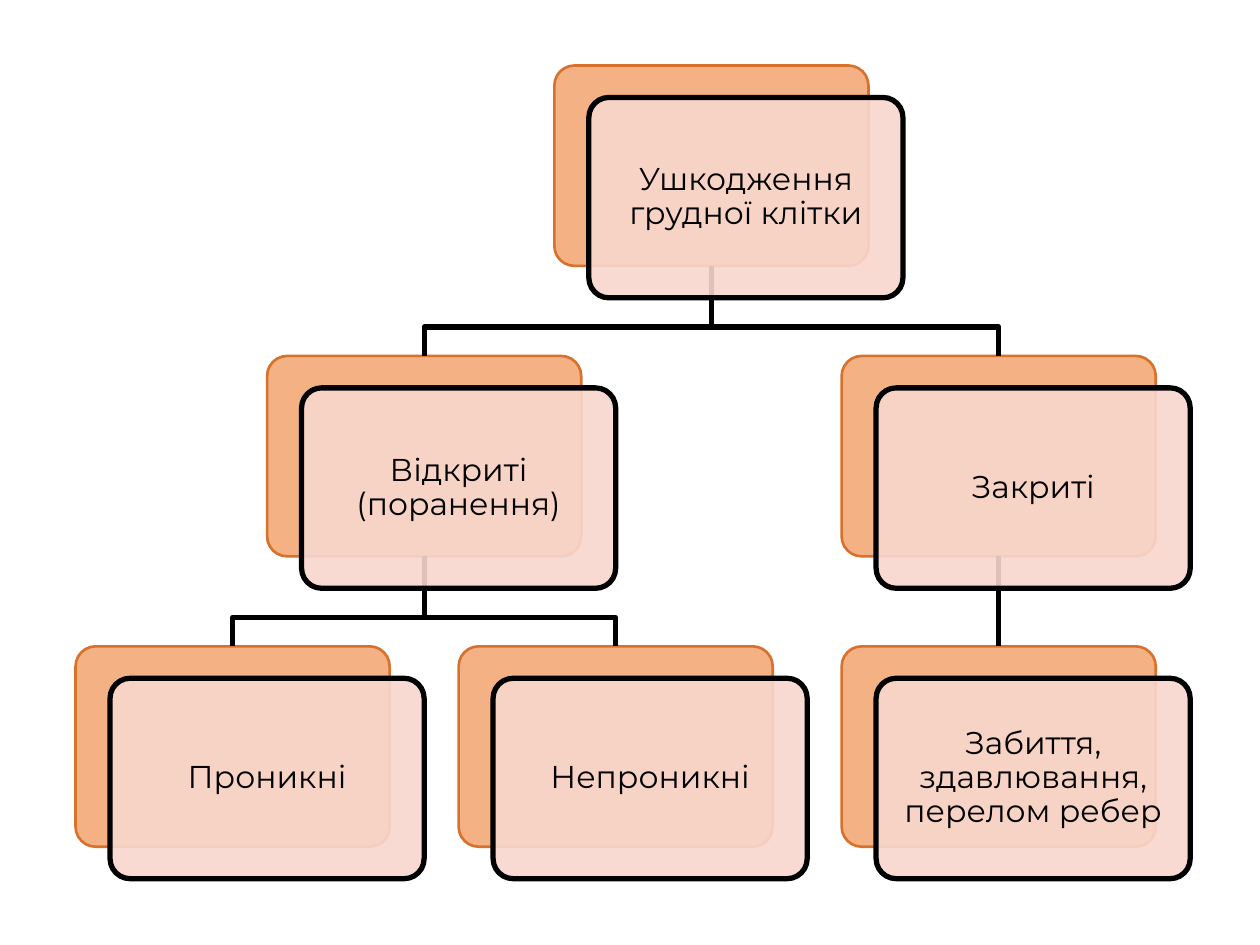
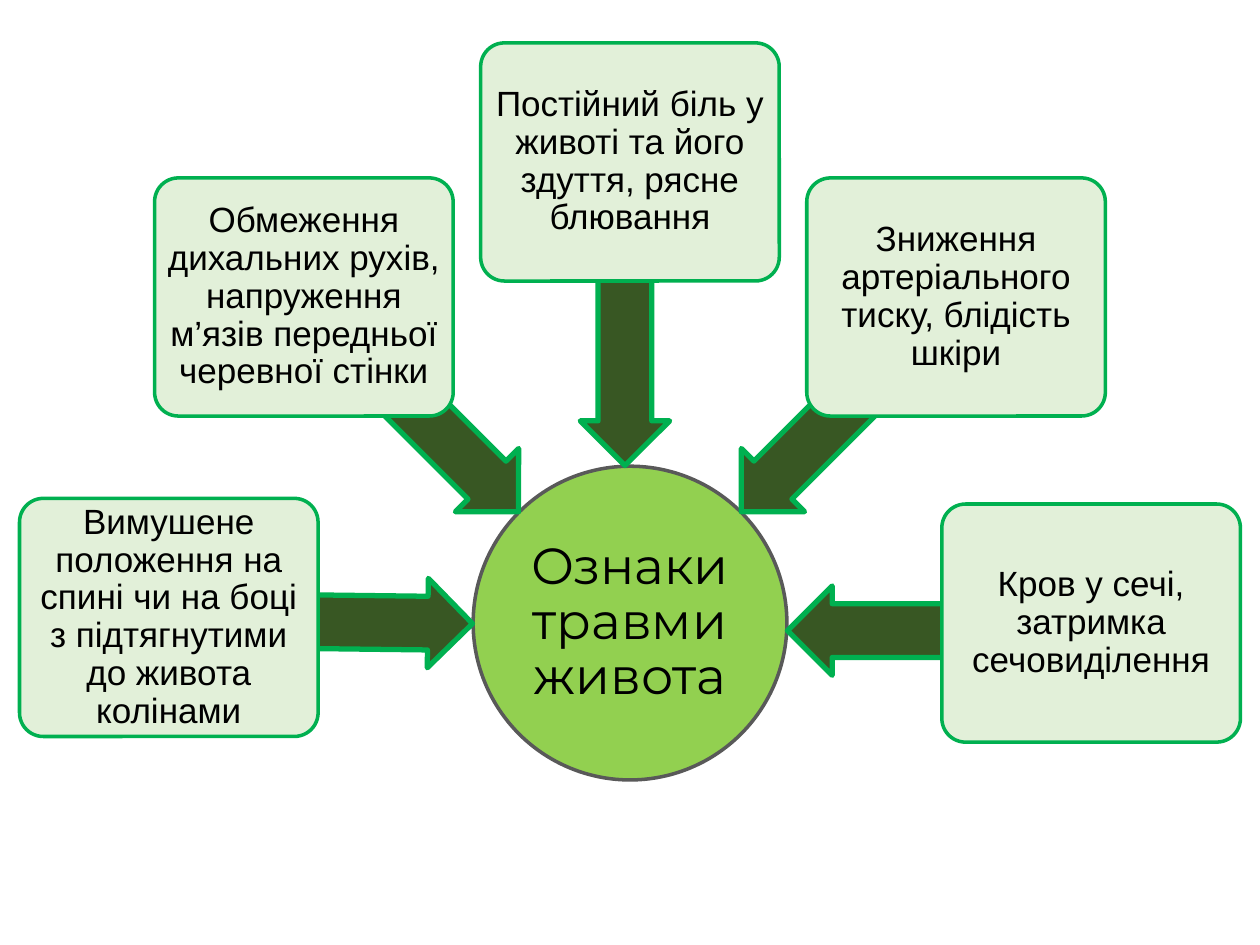
from collections import namedtuple
from math import cos, radians, sin

from lxml.etree import SubElement
from pptx import Presentation
from pptx.dml.color import RGBColor
from pptx.enum.shapes import MSO_CONNECTOR, MSO_SHAPE
from pptx.enum.text import MSO_ANCHOR, PP_ALIGN
from pptx.oxml.ns import qn
from pptx.util import Inches, Pt

Box = namedtuple("Box", "left top width height")
Node = namedtuple("Node", "text column row parent")
Sign = namedtuple("Sign", "text angle arrow_shift")

SLIDE_WIDTH, SLIDE_HEIGHT = Inches(10), Inches(7.5)
CELL = SLIDE_WIDTH / 100
BLACK, GREEN = "000000", "00B050"

TREE_BOX = Box(6, 5.2, 91.2, 69.15)
NODES = {
    "root": Node("Ушкодження грудної клітки", 1.25, 0, None),
    "open": Node("Відкриті (поранення)", 0.5, 1, "root"),
    "closed": Node("Закриті", 2, 1, "root"),
    "deep": Node("Проникні", 0, 2, "open"),
    "shallow": Node("Непроникні", 1, 2, "open"),
    "bruise": Node("Забиття, здавлювання, перелом ребер", 2, 2, "closed"),
}

SIGNS_BOX = Box(0, 3.4, 100, 58.5)
SIGNS = [
    Sign("Вимушене положення на спині чи на боці з підтягнутими до живота колінами",
         179.3, 0.2),
    Sign("Обмеження дихальних рухів, напруження м’язів передньої черевної стінки",
         135, 0),
    Sign("Постійний біль у животі та його здуття, рясне блювання", 90, 0.4),
    Sign("Зниження артеріального тиску, блідість шкіри", 45, 0),
    Sign("Кров у сечі, затримка сечовиділення", 0, -0.6),
]


def color(value):
    """Turn a hex string into a colour."""
    return RGBColor.from_string(value)


def length(cells):
    """Turn grid cells into slide units."""
    return int(round(cells * CELL))


def centered(x, y, width, height):
    """Return the box of a given size around a centre."""
    return Box(x - width / 2, y - height / 2, width, height)


def set_line(shape, value, weight):
    """Format the outline of a shape or connector."""
    shape.line.color.rgb = color(value)
    shape.line.width = Pt(weight)


def add_figure(page, kind, box, fill, line, weight, adjustments=(), opacity=None):
    """Draw a filled and outlined preset shape."""
    shape = page.shapes.add_shape(kind, *map(length, box))
    shape.shadow.inherit = False
    for index, value in enumerate(adjustments):
        shape.adjustments[index] = value
    shape.fill.solid()
    shape.fill.fore_color.rgb = color(fill)
    if opacity is not None:
        tint = shape.fill._xPr.find(".//" + qn("a:srgbClr"))
        SubElement(tint, qn("a:alpha"), val=str(opacity * 1000))
    set_line(shape, line, weight)
    return shape


def write(shape, text, size, font, inset):
    """Put centred text in a shape."""
    frame = shape.text_frame
    frame.word_wrap = True
    frame.vertical_anchor = MSO_ANCHOR.MIDDLE
    frame.margin_left = frame.margin_right = Inches(inset)
    frame.margin_top = frame.margin_bottom = Inches(inset)
    para = frame.paragraphs[0]
    para.alignment = PP_ALIGN.CENTER
    para.line_spacing = 0.9
    span = para.add_run()
    span.text = text
    span.font.size = Pt(size)
    span.font.name = font
    span.font.color.rgb = color(BLACK)


def link(page, parent, child, bend):
    """Join a parent card to a child card, with a bend where they are not aligned."""
    start_x = parent.left + parent.width // 2
    start_y = parent.top + parent.height
    end_x = child.left + child.width // 2
    if start_x == end_x:
        line = page.shapes.add_connector(
            MSO_CONNECTOR.STRAIGHT, start_x, start_y, end_x, child.top)
        line.begin_connect(parent, 2)
        line.end_connect(child, 0)
        SubElement(line._element.spPr, qn("a:effectLst"))
    else:
        bend_y = start_y + length(bend)
        builder = page.shapes.build_freeform(start_x, start_y)
        builder.add_line_segments(
            [(start_x, bend_y), (end_x, bend_y), (end_x, child.top)], close=False)
        line = builder.convert_to_shape()
        line.fill.background()
        line.shadow.inherit = False
    set_line(line, BLACK, 3)


def build_tree(page, box):
    """Draw the hierarchy of chest injuries on three columns and rows."""
    column, row = box.width / 3, box.height / 3
    backs, spots = {}, {}
    for name, node in NODES.items():
        spot = Box(box.left + node.column * column, box.top + node.row * row,
                   0.82 * column, 0.69 * row)
        spots[name] = spot
        backs[name] = add_figure(page, MSO_SHAPE.ROUNDED_RECTANGLE, spot,
                                 "F4B183", "D7712C", 1.5, [0.1])
    for name, node in NODES.items():
        if node.parent:
            link(page, backs[node.parent], backs[name], 0.21 * row)
    for name, node in NODES.items():
        spot = spots[name]
        front = spot._replace(left=spot.left + 0.09 * column,
                              top=spot.top + 0.11 * row)
        card = add_figure(page, MSO_SHAPE.ROUNDED_RECTANGLE, front,
                          "F8D7CE", BLACK, 3, [0.1], opacity=90)
        write(card, node.text, size=18, font="Montserrat", inset=0.07)


def build_signs(page, box):
    """Draw the hub with the signs of abdominal injury around it."""
    hub_size, card_radius, arrow_radius = 24.9, 36.6, 23.9
    x = box.left + box.width / 2
    y = box.top + box.height - hub_size / 2
    hub = add_figure(page, MSO_SHAPE.OVAL, centered(x, y, hub_size, hub_size),
                     "92D050", "595959", 2)
    write(hub, "Ознаки травми живота", size=29, font="Montserrat", inset=0.02)
    for sign in SIGNS:
        across, up = cos(radians(sign.angle)), sin(radians(sign.angle))
        arrow_x = x + arrow_radius * across - sign.arrow_shift * up
        arrow_y = y - arrow_radius * up - sign.arrow_shift * across
        arrow = add_figure(page, MSO_SHAPE.LEFT_ARROW,
                           centered(arrow_x, arrow_y, 22.8, 7.1),
                           "385723", GREEN, 3, [0.6, 0.5])
        arrow.rotation = -sign.angle % 360
        card = add_figure(page, MSO_SHAPE.ROUNDED_RECTANGLE,
                          centered(x + card_radius * across, y - card_radius * up,
                                   23.7, 18.9),
                          "E2F0D9", GREEN, 2, [0.1])
        write(card, sign.text, size=20, font="Arial", inset=0.04)


def main():
    """Build and save the deck."""
    deck = Presentation()
    deck.slide_width, deck.slide_height = SLIDE_WIDTH, SLIDE_HEIGHT
    blank = deck.slide_layouts[6]
    build_tree(deck.slides.add_slide(blank), TREE_BOX)
    build_signs(deck.slides.add_slide(blank), SIGNS_BOX)
    deck.save("out.pptx")


if __name__ == "__main__":
    main()
